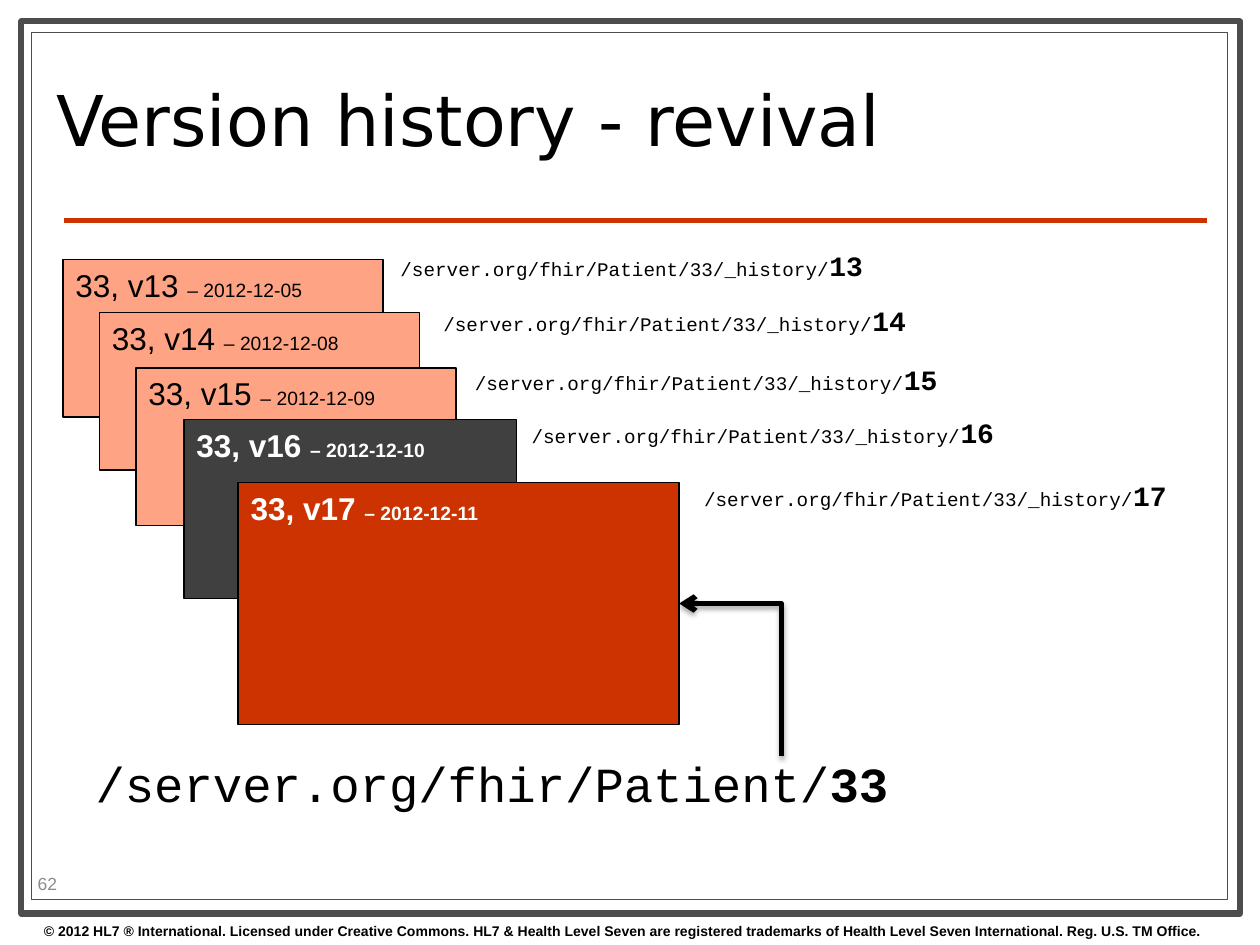
from dataclasses import dataclass

from lxml import etree
from pptx import Presentation
from pptx import util as u
from pptx.dml.color import RGBColor
from pptx.enum import shapes, text
from pptx.oxml import parse_xml
from pptx.oxml.ns import nsdecls, qn

BLACK = RGBColor(0x00, 0x00, 0x00)
WHITE = RGBColor(0xFF, 0xFF, 0xFF)
FRAME = RGBColor(0x4D, 0x4D, 0x4D)
NUMBER = RGBColor(0x8C, 0x8C, 0x8C)
PAST = RGBColor(0xFF, 0xA3, 0x85)
DELETED = RGBColor(0x40, 0x40, 0x40)
CURRENT = RGBColor(0xCC, 0x33, 0x00)

COLUMNS, ROWS = 100, 75
SLIDE_WIDTH, SLIDE_HEIGHT = u.Inches(10), u.Inches(7.5)
SANS, MONO, TITLE = "Arial", "Courier New", "DejaVu Sans"


@dataclass(frozen=True)
class Area:
    column: float
    row: float
    columns: float
    rows: float

    def lengths(self) -> tuple[int, int, int, int]:
        return (across(self.column), down(self.row),
                across(self.columns), down(self.rows))


@dataclass(frozen=True)
class Run:
    words: str
    size: float
    font: str = SANS
    color: RGBColor = BLACK
    bold: bool = False


@dataclass(frozen=True)
class Version:
    number: int
    date: str
    card: Area
    link: Area
    fill: RGBColor = PAST
    ink: RGBColor = BLACK
    bold: bool = False


VERSIONS = [
    Version(13, "2012-12-05", Area(5, 20.6, 25.4, 12.5), Area(30.8, 19.2, 44.6, 3.7)),
    Version(14, "2012-12-08", Area(7.9, 24.8, 25.4, 12.5), Area(34.2, 23.6, 45.8, 3.7)),
    Version(15, "2012-12-09", Area(10.8, 29.2, 25.4, 12.5), Area(36.7, 28.3, 45.5, 3.7)),
    Version(16, "2012-12-10", Area(14.6, 33.3, 26.4, 14.2), Area(41.2, 32.5, 43.8, 3.7),
            DELETED, WHITE, True),
    Version(17, "2012-12-11", Area(18.9, 38.3, 35, 19.2), Area(54.9, 37.5, 41, 3.7),
            CURRENT, WHITE, True),
]


def across(columns: float) -> int:
    return round(SLIDE_WIDTH * columns / COLUMNS)


def down(rows: float) -> int:
    return round(SLIDE_HEIGHT * rows / ROWS)


def add_runs(paragraph, runs: list[Run]) -> None:
    for item in runs:
        run = paragraph.add_run()
        run.text = item.words
        run.font.size = u.Pt(item.size)
        run.font.name = item.font
        run.font.bold = item.bold
        run.font.color.rgb = item.color


def add_box(slide, area: Area, fill: RGBColor, line: RGBColor, weight: float):
    shape = slide.shapes.add_shape(shapes.MSO_SHAPE.RECTANGLE, *area.lengths())
    shape.shadow.inherit = False
    shape.fill.solid()
    shape.fill.fore_color.rgb = fill
    shape.line.color.rgb = line
    shape.line.width = u.Pt(weight)
    return shape


def add_text(slide, area: Area, runs: list[Run], anchor=text.MSO_ANCHOR.TOP):
    frame = slide.shapes.add_textbox(*area.lengths()).text_frame
    frame.word_wrap = True
    frame.vertical_anchor = anchor
    add_runs(frame.paragraphs[0], runs)
    return frame.paragraphs[0]


def add_version(slide, version: Version) -> None:
    frame = add_box(slide, version.card, version.fill, BLACK, 0.75).text_frame
    frame.word_wrap = True
    frame.vertical_anchor = text.MSO_ANCHOR.TOP
    frame.paragraphs[0].alignment = text.PP_ALIGN.LEFT
    add_runs(frame.paragraphs[0], [
        Run(f"33, v{version.number} ", 18, SANS, version.ink, version.bold),
        Run(f"– {version.date}", 11, SANS, version.ink, version.bold),
    ])
    add_text(slide, version.link, [
        Run("/server.org/fhir/Patient/33/_history/", 11, MONO),
        Run(str(version.number), 16, MONO, bold=True),
    ])


def add_line(slide, kind, area: Area, color: RGBColor, weight: float):
    left, top, width, height = area.lengths()
    connector = slide.shapes.add_connector(kind, left, top, left + width, top + height)
    connector.line.color.rgb = color
    connector.line.width = u.Pt(weight)
    effects = etree.SubElement(connector._element.spPr, qn("a:effectLst"))
    return connector, effects


def add_current_arrow(slide) -> None:
    connector, effects = add_line(
        slide, shapes.MSO_CONNECTOR.ELBOW, Area(51.9, 49.9, 12.1, 8.1), BLACK, 3)
    properties = connector._element.spPr
    transform = properties.find(qn("a:xfrm"))
    transform.set("rot", str(270 * 60000))
    transform.set("flipV", "1")
    properties.find(qn("a:prstGeom")).set("prst", "bentConnector2")
    etree.SubElement(properties.find(qn("a:ln")), qn("a:tailEnd"), type="arrow")
    effects.append(parse_xml(
        f'<a:outerShdw {nsdecls("a")} blurRad="{u.Pt(3.1)}" dist="{u.Pt(1.8)}" '
        f'dir="{90 * 60000}" rotWithShape="0"><a:srgbClr val="{BLACK}">'
        '<a:alpha val="35000"/></a:srgbClr></a:outerShdw>'))


def main() -> None:
    presentation = Presentation()
    presentation.slide_width, presentation.slide_height = SLIDE_WIDTH, SLIDE_HEIGHT
    slide = presentation.slides.add_slide(presentation.slide_layouts[6])

    add_box(slide, Area(1.7, 1.7, 96.7, 70.8), WHITE, FRAME, 3.5)
    add_box(slide, Area(2.5, 2.6, 94.9, 68.8), WHITE, FRAME, 0.75)
    add_line(slide, shapes.MSO_CONNECTOR.STRAIGHT, Area(5.1, 17.5, 90.7, 0), CURRENT, 3)
    add_text(slide, Area(2.5, 72.7, 97, 2.3), [Run(
        "© 2012 HL7 ® International. Licensed under Creative Commons. "
        "HL7 & Health Level Seven are registered trademarks of "
        "Health Level Seven International. Reg. U.S. TM Office.", 8, bold=True)])
    title = add_text(slide, Area(3.5, 3.6, 71.7, 12.9),
                     [Run("Version history - revival", 40, TITLE)],
                     text.MSO_ANCHOR.MIDDLE)
    title.line_spacing = 0.8
    add_text(slide, Area(2, 68.9, 7.9, 2.4), [Run("62", 10, color=NUMBER)],
             text.MSO_ANCHOR.MIDDLE)

    for version in VERSIONS:
        add_version(slide, version)
    add_text(slide, Area(6.6, 59.3, 68.8, 5.7), [
        Run("/server.org/fhir/Patient/", 28, MONO),
        Run("33", 28, MONO, bold=True),
    ])
    add_current_arrow(slide)
    presentation.save("out.pptx")


if __name__ == "__main__":
    main()
